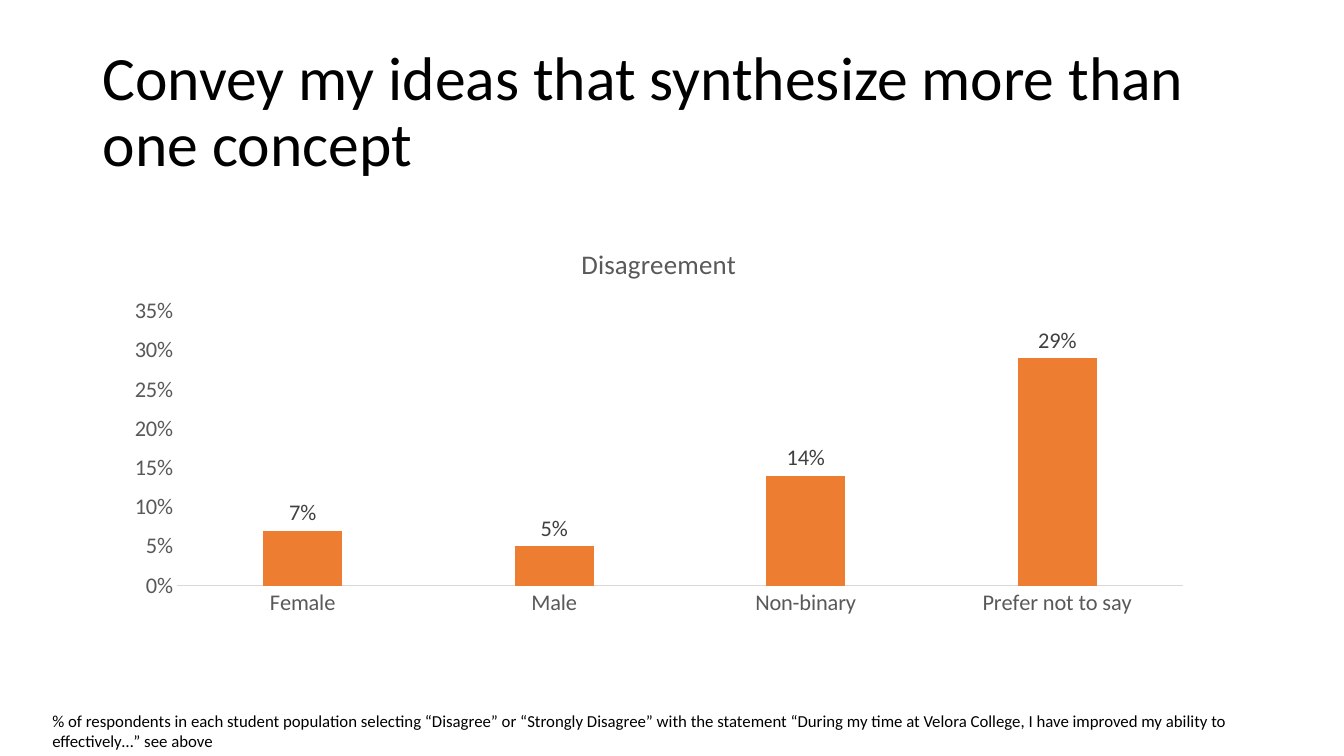
from dataclasses import dataclass
from typing import Any

from pptx import Presentation
from pptx.chart.data import CategoryChartData
from pptx.dml.color import RGBColor
from pptx.enum.chart import XL_CHART_TYPE, XL_LABEL_POSITION, XL_TICK_MARK
from pptx.enum.text import MSO_ANCHOR
from pptx.util import Inches, Pt

GREY = "595959"


@dataclass
class Note:
    text: str
    box: tuple[float, float, float, float]
    size: float
    frame: dict[str, Any]
    para: dict[str, Any]


NOTES = [
    Note(
        "Convey my ideas that synthesize more than one concept",
        (0.92, 0.4, 11.5, 1.45),
        44,
        {"word_wrap": True, "vertical_anchor": MSO_ANCHOR.MIDDLE},
        {"line_spacing": 0.9},
    ),
    Note(
        "% of respondents in each student population selecting “Disagree” or "
        "“Strongly Disagree” with the statement “During my time at Velora College, "
        "I have improved my ability to effectively…” see above",
        (0.42, 7, 12.49, 0.5),
        12,
        {"word_wrap": True, "vertical_anchor": MSO_ANCHOR.TOP},
        {},
    ),
]

RATES = {"Female": 0.07, "Male": 0.05, "Non-binary": 0.14, "Prefer not to say": 0.29}


def color(code: str) -> RGBColor:
    return RGBColor.from_string(code)


def apply(target: Any, values: dict[str, Any]) -> None:
    for name, value in values.items():
        setattr(target, name, value)


def style(font: Any, size: float, code: str) -> None:
    apply(font, {"name": "Calibri", "size": Pt(size), "bold": False})
    font.color.rgb = color(code)


def add_note(slide: Any, note: Note) -> None:
    frame = slide.shapes.add_textbox(*map(Inches, note.box)).text_frame
    apply(frame, note.frame)
    para = frame.paragraphs[0]
    apply(para, note.para)
    run = para.add_run()
    run.text = note.text
    style(run.font, note.size, "000000")


def add_bars(slide: Any) -> None:
    data = CategoryChartData(number_format="0%")
    data.categories = list(RATES)
    data.add_series("Disagreement", list(RATES.values()))
    box = map(Inches, (1.12, 2.25, 10.83, 3.95))
    chart = slide.shapes.add_chart(XL_CHART_TYPE.COLUMN_CLUSTERED, *box, data).chart
    style(chart.font, 16, "000000")
    apply(chart, {"has_legend": False, "has_title": True})
    title = chart.chart_title.text_frame.paragraphs[0].add_run()
    title.text = "Disagreement"
    style(title.font, 19.2, GREY)

    ticks = {
        "major_tick_mark": XL_TICK_MARK.NONE,
        "minor_tick_mark": XL_TICK_MARK.NONE,
        "has_major_gridlines": False,
    }
    for axis in (chart.category_axis, chart.value_axis):
        apply(axis, ticks)
        style(axis.tick_labels.font, 16, GREY)
    line = chart.category_axis.format.line
    line.color.rgb = color("D9D9D9")
    line.width = Pt(0.75)
    scale = chart.value_axis
    scale.format.line.fill.background()
    apply(scale, {"minimum_scale": 0, "maximum_scale": 0.35, "major_unit": 0.05})

    percent = {"number_format": "0%", "number_format_is_linked": False}
    apply(scale.tick_labels, percent)
    plot = chart.plots[0]
    apply(plot, {"gap_width": 219, "overlap": -27, "vary_by_categories": False})
    bars = plot.series[0]
    bars.format.fill.solid()
    bars.format.fill.fore_color.rgb = color("ED7D31")
    labels = bars.data_labels
    apply(labels, percent)
    apply(labels, {"show_value": True, "position": XL_LABEL_POSITION.OUTSIDE_END})
    style(labels.font, 16, "404040")


def main() -> None:
    deck = Presentation()
    apply(deck, {"slide_width": Inches(13.33), "slide_height": Inches(7.5)})
    slide = deck.slides.add_slide(deck.slide_layouts[6])
    for note in NOTES:
        add_note(slide, note)
    add_bars(slide)
    deck.save("out.pptx")


if __name__ == "__main__":
    main()
